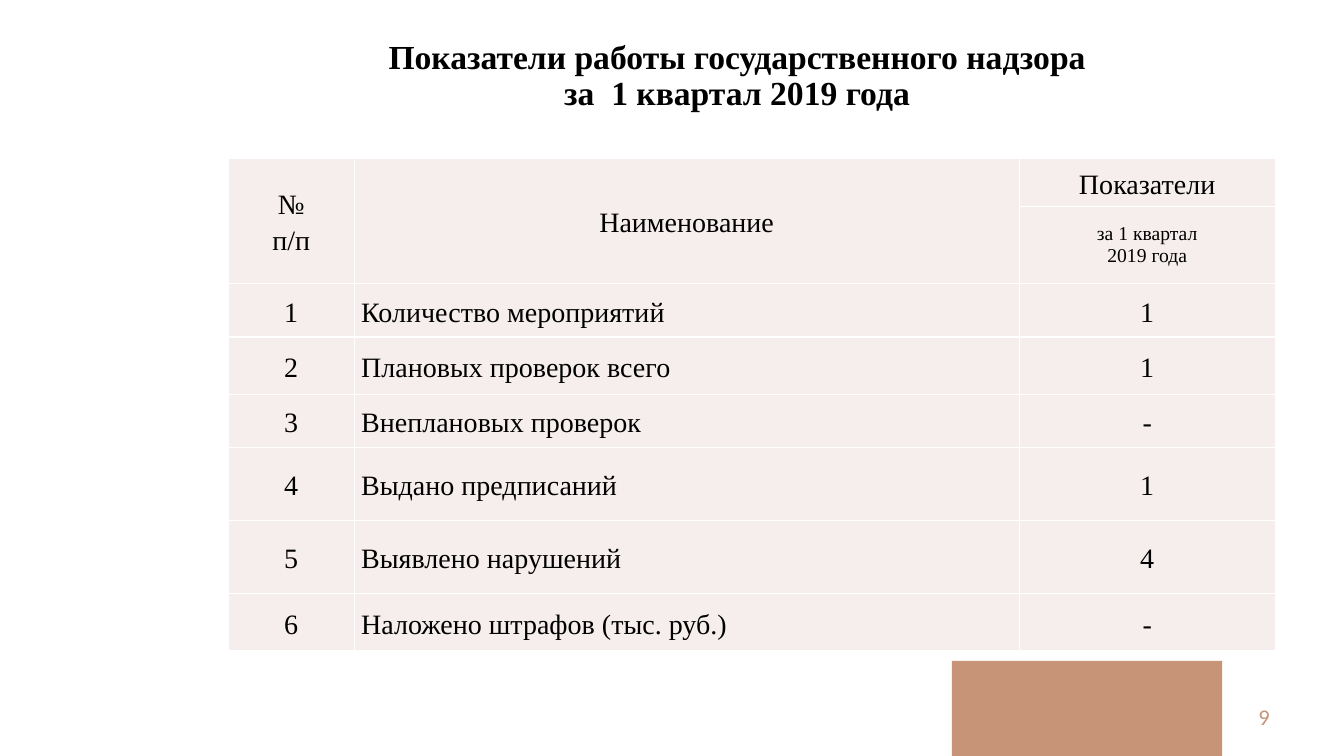
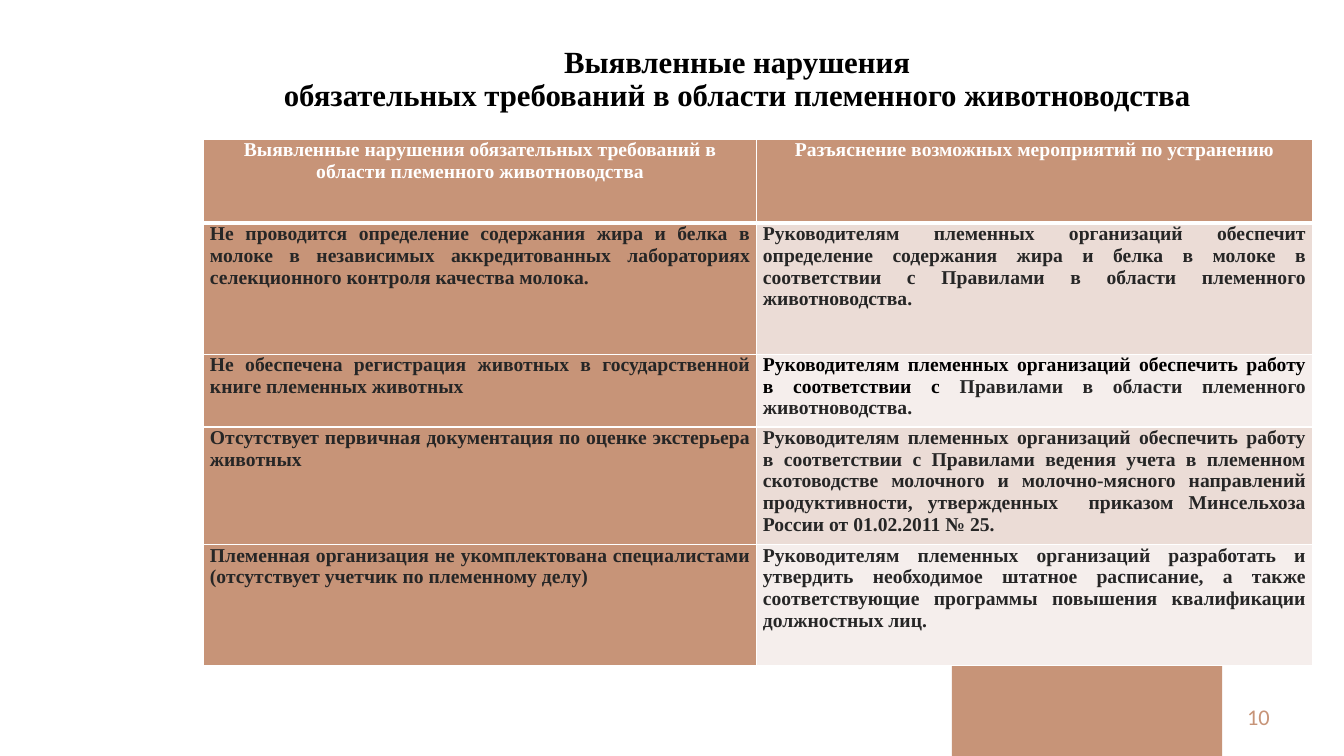
"""Builds two table slides on state supervision of pedigree livestock breeding."""
import pptx
import pptx.util
import pptx.dml.color
import pptx.enum.shapes
import pptx.enum.text
import pptx.oxml
from pptx.oxml.ns import nsdecls

Pt = pptx.util.Pt
ALIGN = pptx.enum.text.PP_ALIGN
ANCHOR = pptx.enum.text.MSO_ANCHOR

SERIF, SANS = "Times New Roman", "Calibri"
WHITE, BLACK, INK = "FFFFFF", "000000", "262626"
ACCENT, TINT, PALE = "C79478", "EBDCD6", "F5EEEC"

INDICATORS = {
    "title": "Показатели работы государственного надзора\vза  1 квартал 2019 года",
    "title_size": 24,
    "number": 9,
    "origin": (163, 113),
    "cols": [90, 475, 183],
    "rows": [34.5, 39, 38, 41, 38, 52, 52.5, 40.5],
    "head": ["№\nп/п", "Наименование", "Показатели"],
    "subhead": "за 1 квартал\n2019 года",
    "body": [
        ("Количество мероприятий", "1"),
        ("Плановых проверок всего", "1"),
        ("Внеплановых проверок", "-"),
        ("Выдано предписаний", "1"),
        ("Выявлено нарушений", "4"),
        ("Наложено штрафов (тыс. руб.)", "-"),
    ],
}

VIOLATIONS = {
    "title": "Выявленные нарушения\vобязательных требований в области племенного животноводства",
    "title_size": 22,
    "number": 10,
    "origin": (145.5, 99.5),
    "cols": [395, 397],
    "rows": [60, 93.5, 52, 70, 86.5],
    "head": [
        "Выявленные нарушения обязательных требований в области племенного животноводства",
        "Разъяснение возможных мероприятий по устранению",
    ],
    "body": [
        ("Не проводится определение содержания жира и белка в молоке в независимых "
         "аккредитованных лабораториях селекционного контроля качества молока.",
         [("Руководителям племенных организаций обеспечит определение содержания жира и белка "
           "в молоке в соответствии с Правилами в области племенного животноводства.", INK)]),
        ("Не обеспечена регистрация животных в государственной книге племенных животных",
         [("Руководителям племенных организаций обеспечить работу в соответствии с ", BLACK),
          ("Правилами в области племенного животноводства.", INK)]),
        ("Отсутствует первичная документация по оценке экстерьера животных",
         [("Руководителям племенных организаций обеспечить работу в соответствии с Правилами "
           "ведения учета в племенном скотоводстве молочного и молочно-мясного направлений "
           "продуктивности, утвержденных  приказом Минсельхоза России от 01.02.2011 № 25.", INK)]),
        ("Племенная организация не укомплектована специалистами "
         "(отсутствует учетчик по племенному делу)",
         [("Руководителям племенных организаций разработать и утвердить необходимое штатное "
           "расписание, а также соответствующие программы повышения квалификации "
           "должностных лиц.", INK)]),
    ],
}


def rgb(value):
    return pptx.dml.color.RGBColor.from_string(value)


def place(sp, left, top, width, height):
    sp.left, sp.top, sp.width, sp.height = Pt(left), Pt(top), Pt(width), Pt(height)


def style(r, size, color, bold=False, font=SERIF):
    r.font.name, r.font.size, r.font.bold = font, Pt(size), bold
    r.font.color.rgb = rgb(color)


def write(tf, text, size, color, align, bold=False, font=SERIF, spacing=1.0):
    tf.text = text
    for p in tf.paragraphs:
        p.alignment, p.line_spacing = align, spacing
        for r in p.runs:
            style(r, size, color, bold, font)


def start_slide(prs, data):
    s = prs.slides.add_slide(prs.slide_layouts[5])
    band = s.shapes.add_shape(pptx.enum.shapes.MSO_SHAPE.RECTANGLE,
                              Pt(680), Pt(472), Pt(193), Pt(68))
    band.shadow.inherit = False
    band.fill.solid()
    band.fill.fore_color.rgb = rgb(ACCENT)
    band.line.fill.background()

    number = s.shapes.add_textbox(Pt(698), Pt(497), Pt(216), Pt(29)).text_frame
    number.word_wrap = True
    number.vertical_anchor = ANCHOR.MIDDLE
    write(number, str(data["number"]), 16, ACCENT, ALIGN.RIGHT, font=SANS)

    title = s.shapes.title
    place(title, 174, 29, 705, 55.5)
    tf = title.text_frame
    tf.word_wrap = True
    tf.auto_size = pptx.enum.text.MSO_AUTO_SIZE.NONE
    tf.vertical_anchor = ANCHOR.BOTTOM
    write(tf, data["title"], data["title_size"], BLACK, ALIGN.CENTER, True, spacing=0.9)
    return s


def add_table(s, data):
    cols, rows = data["cols"], data["rows"]
    left, top = data["origin"]
    table = s.shapes.add_table(len(rows), len(cols), Pt(left), Pt(top),
                               Pt(sum(cols)), Pt(sum(rows))).table
    for column, width in zip(table.columns, cols):
        column.width = Pt(width)
    for row, height in zip(table.rows, rows):
        row.height = Pt(height)
    return table


def format_cell(cell, fill, inset, anchor=ANCHOR.TOP, top=1, bottom=1):
    cell.margin_left = cell.margin_right = Pt(inset)
    cell.margin_top = cell.margin_bottom = Pt(0)
    cell.vertical_anchor = anchor
    tc_pr = cell._tc.get_or_add_tcPr()
    for side, width in (("L", 1), ("R", 1), ("T", top), ("B", bottom)):
        tc_pr.append(pptx.oxml.parse_xml(
            f'<a:ln{side} {nsdecls("a")} w="{Pt(width)}"><a:solidFill>'
            f'<a:srgbClr val="{WHITE}"/></a:solidFill></a:ln{side}>'))
    cell.fill.solid()
    cell.fill.fore_color.rgb = rgb(fill)


def indicators_slide(prs):
    data = INDICATORS
    table = add_table(start_slide(prs, data), data)
    for cell in table.iter_cells():
        format_cell(cell, PALE, 5, ANCHOR.MIDDLE)
    for j in (0, 1):
        table.cell(0, j).merge(table.cell(1, j))
    for j, text in enumerate(data["head"]):
        write(table.cell(0, j).text_frame, text, 20, BLACK, ALIGN.CENTER, spacing=1.15)
    write(table.cell(1, 2).text_frame, data["subhead"], 14, BLACK, ALIGN.CENTER)
    for i, (name, value) in enumerate(data["body"], 1):
        for j, text in enumerate((str(i), name, value)):
            align = ALIGN.LEFT if j == 1 else ALIGN.CENTER
            write(table.cell(i + 1, j).text_frame, text, 20, BLACK, align, spacing=1.15)


def violations_slide(prs):
    data = VIOLATIONS
    table = add_table(start_slide(prs, data), data)
    for j, text in enumerate(data["head"]):
        cell = table.cell(0, j)
        format_cell(cell, ACCENT, 4.5, bottom=3)
        write(cell.text_frame, text, 14, WHITE, ALIGN.CENTER, True)
    for i, (violation, remedy) in enumerate(data["body"], 1):
        top = 3 if i == 1 else 1
        cell = table.cell(i, 0)
        format_cell(cell, ACCENT, 4.5, top=top)
        write(cell.text_frame, violation, 14, INK, ALIGN.JUSTIFY, True)
        cell = table.cell(i, 1)
        format_cell(cell, TINT if i % 2 else PALE, 4.5, top=top)
        p = cell.text_frame.paragraphs[0]
        p.alignment = ALIGN.JUSTIFY
        for text, color in remedy:
            r = p.add_run()
            r.text = text
            style(r, 14, color, True)


def main():
    prs = pptx.Presentation()
    prs.slide_width, prs.slide_height = Pt(960), Pt(540)
    indicators_slide(prs)
    violations_slide(prs)
    prs.save("out.pptx")


if __name__ == "__main__":
    main()
